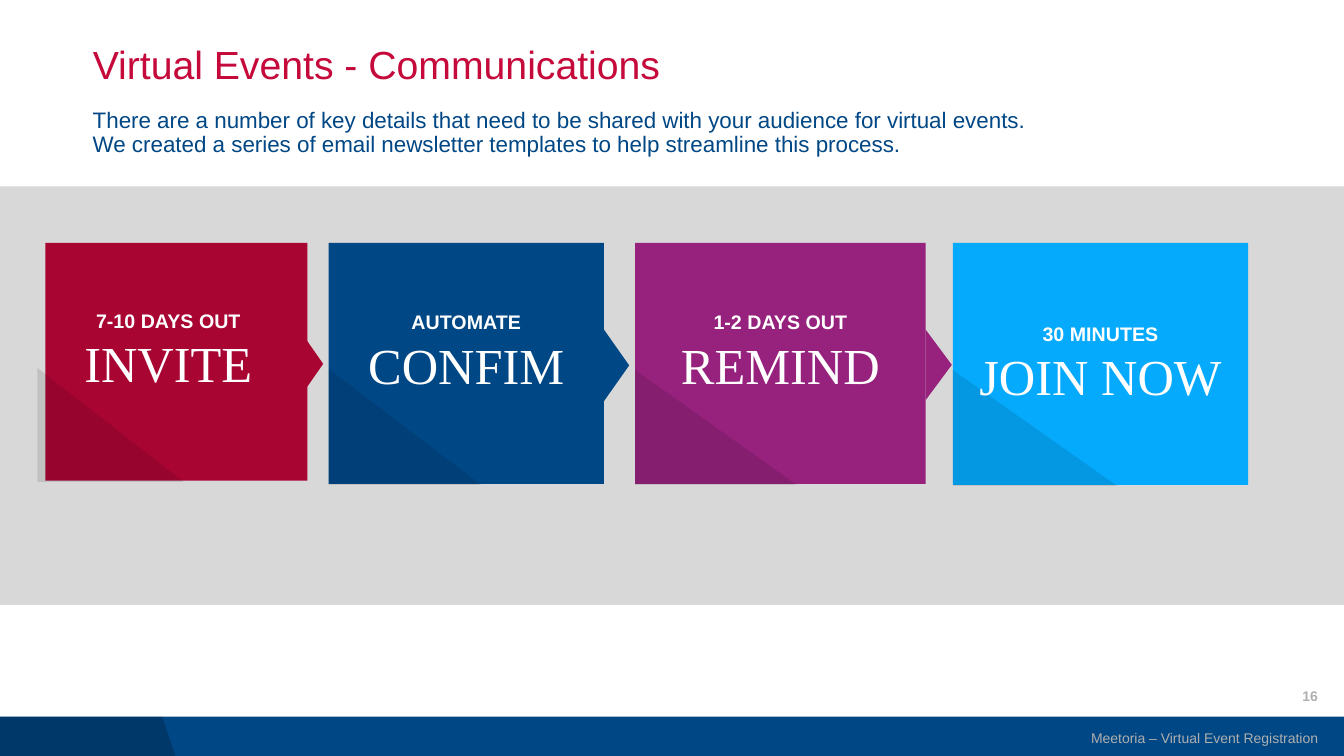
"""Build the virtual events communications slide."""
from lxml import etree
from pptx import Presentation
from pptx.dml.color import RGBColor
from pptx.enum.shapes import MSO_SHAPE
from pptx.enum.text import MSO_ANCHOR, MSO_AUTO_SIZE, PP_ALIGN
from pptx.oxml.ns import qn
from pptx.util import Inches, Pt

RECT = MSO_SHAPE.RECTANGLE
TRIANGLE = MSO_SHAPE.ISOSCELES_TRIANGLE
TOP, MIDDLE = MSO_ANCHOR.TOP, MSO_ANCHOR.MIDDLE
LEFT, CENTER, RIGHT = PP_ALIGN.LEFT, PP_ALIGN.CENTER, PP_ALIGN.RIGHT
NO_FIT = MSO_AUTO_SIZE.NONE

NAVY = RGBColor(0x00, 0x47, 0x85)
CRIMSON = RGBColor(0xC5, 0x09, 0x3B)
RED = RGBColor(0xA9, 0x05, 0x33)
PURPLE = RGBColor(0x96, 0x22, 0x7D)
SKY = RGBColor(0x06, 0xAA, 0xFC)
SILVER = RGBColor(0xD8, 0xD8, 0xD8)
GRAY = RGBColor(0xAF, 0xAF, 0xAF)
BLACK = RGBColor(0x00, 0x00, 0x00)
WHITE = RGBColor(0xFF, 0xFF, 0xFF)

deck = Presentation()
deck.slide_width = Inches(13.33)
deck.slide_height = Inches(7.5)
slide = deck.slides.add_slide(deck.slide_layouts[5])
shapes = slide.shapes


def paint(shape, color, alpha=None):
    shape.shadow.inherit = False
    shape.line.fill.background()
    shape.fill.solid()
    shape.fill.fore_color.rgb = color
    if alpha:
        tint = shape.fill._xPr.find(qn("a:solidFill"))[0]
        etree.SubElement(tint, qn("a:alpha"), val=str(alpha * 1000))


def write(box, lines, align, anchor, insets, spacing=None):
    frame = box.text_frame
    frame.word_wrap = True
    frame.auto_size = NO_FIT
    frame.vertical_anchor = anchor
    (frame.margin_left, frame.margin_top,
     frame.margin_right, frame.margin_bottom) = map(Inches, insets)
    for i, (text, size, face, color, bold) in enumerate(lines):
        para = frame.add_paragraph() if i else frame.paragraphs[0]
        para.text = text
        para.alignment = align
        para.line_spacing = spacing
        font = para.font
        font.size, font.name, font.bold = Pt(size), face, bold
        font.color.rgb = color


bar = shapes.add_shape(RECT, 0, Inches(7.11), Inches(13.33), Inches(0.42))
paint(bar, NAVY)
edge = shapes.build_freeform(0, Inches(7.11))
edge.add_line_segments([(Inches(x), Inches(y)) for x, y in
                        [(1.61, 7.11), (1.75, 7.53), (0, 7.53)]])
paint(edge.convert_to_shape(), BLACK, 20)

title = shapes.title
title.left, title.top = Inches(0.92), Inches(0.4)
title.width, title.height = Inches(11.5), Inches(0.53)
write(title, [("Virtual Events - Communications", 28, "Arial", CRIMSON, False)],
      LEFT, TOP, (0, 0.05, 0, 0.05), 0.9)

for text, left, top, width, bold in [
        ("Meetoria – Virtual Event Registration", 8.67, 7.12, 4.5, False),
        ("16", 10.17, 6.7, 3, True)]:
    note = shapes.add_textbox(Inches(left), Inches(top), Inches(width), Inches(0.4))
    write(note, [(text, 10, "Arial", GRAY, bold)],
          RIGHT, MIDDLE, (0.1, 0.05, 0.1, 0.05))

intro = shapes.add_textbox(Inches(0.92), Inches(1.08), Inches(9.53), Inches(0.76))
write(intro, [("There are a number of key details that need to be shared with your "
               "audience for virtual events. We created a series of email newsletter "
               "templates to help streamline this process.",
               16, "Arial", NAVY, False)],
      LEFT, TOP, (0, 0, 0, 0), 0.9)

band = shapes.add_shape(RECT, 0, Inches(1.85), Inches(13.33), Inches(4.15))
paint(band, SILVER)

CARD_TOP = 2.41
cards = [
    ("7-10 DAYS OUT", "INVITE", RED, 0.45, 2.6, 2.36, 0.37, (1.45, 1.13),
     (2.74, 3.49, 0.69, 0.24)),
    ("AUTOMATE", "CONFIM", NAVY, 3.26, 2.73, 2.39, 3.26, (1.51, 1.15),
     (5.76, 3.5, 0.71, 0.25)),
    ("1-2 DAYS OUT", "REMIND", PURPLE, 6.3, 2.88, 2.39, 6.3, (1.6, 1.14),
     (8.96, 3.49, 0.7, 0.26)),
    ("30 MINUTES", "JOIN NOW", SKY, 9.45, 2.93, 2.4, 9.45, (1.63, 1.15), None),
]
for when, step, color, left, width, height, inner, shade, arrow in cards:
    card = shapes.add_shape(RECT, Inches(left), Inches(CARD_TOP),
                            Inches(width), Inches(height))
    paint(card, color)

    wide, tall = shade
    corner = shapes.add_shape(TRIANGLE, Inches(inner),
                              Inches(CARD_TOP + height + 0.01 - tall),
                              Inches(wide), Inches(tall))
    corner.adjustments[0] = 0
    paint(corner, BLACK, 10)

    label = shapes.add_textbox(Inches(inner), Inches(CARD_TOP),
                               Inches(width), Inches(height))
    write(label, [(when, 14, "Arial", WHITE, True),
                  (step, 36, "Times New Roman", WHITE, False)],
          CENTER, MIDDLE, (0, 0, 0, 0.22 if arrow else 0))

    if arrow:
        point = shapes.add_shape(TRIANGLE, *map(Inches, arrow))
        point.rotation = 90
        paint(point, color)

deck.save("out.pptx")
